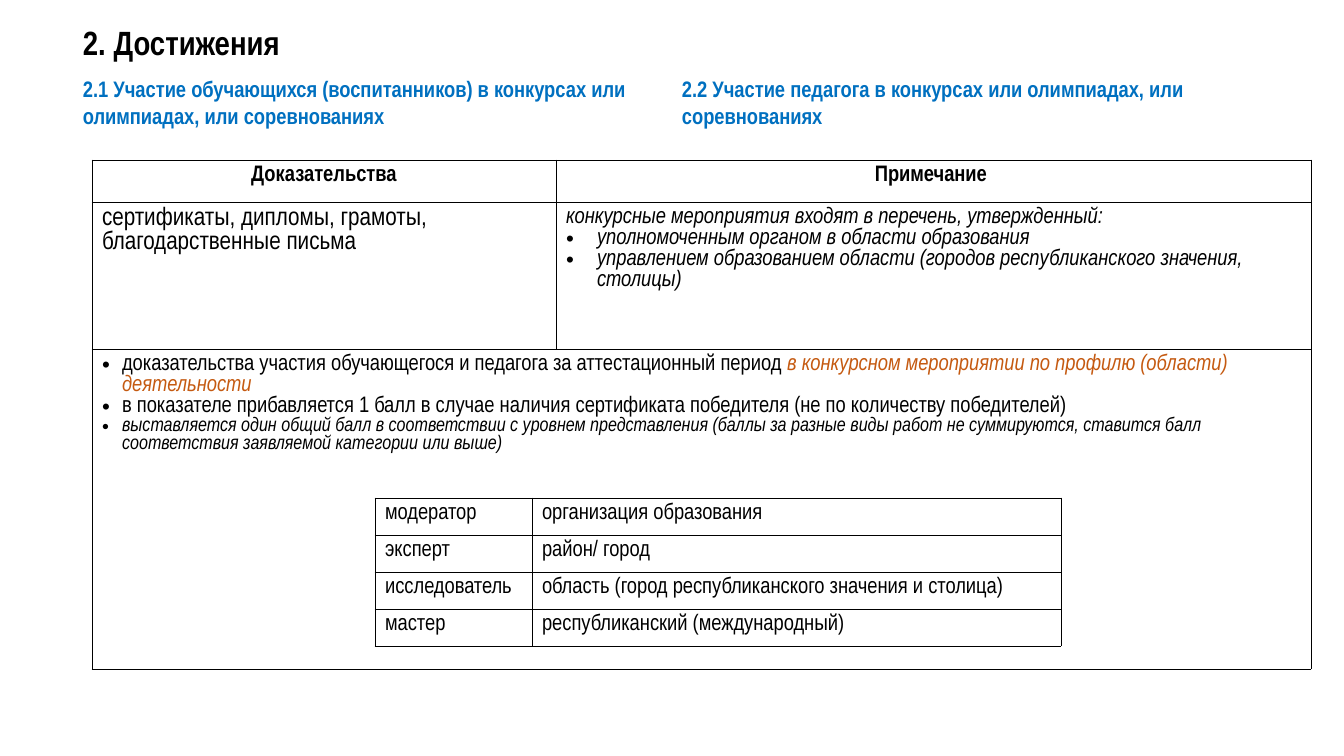
import pptx
import pptx.dml.color
import pptx.enum.text
import pptx.oxml
import pptx.oxml.ns
import pptx.util

PX = 914400 / 100.8
FONT = "Arial Narrow"
COLORS = {"black": "000000", "blue": "0070C0", "orange": "C55A11"}
ALIGN = pptx.enum.text.PP_ALIGN
ANCHOR = pptx.enum.text.MSO_ANCHOR


def px(n):
    return pptx.util.Emu(round(n * PX))


def add_run(p, text, size=16, color="black", bold=False, italic=False):
    r = p.add_run()
    r.text = text
    r.font.name = FONT
    r.font.size = pptx.util.Pt(size)
    r.font.bold = bold
    r.font.italic = italic
    r.font.color.rgb = pptx.dml.color.RGBColor.from_string(COLORS[color])


def add_xml(parent, xml):
    ns = pptx.oxml.ns.nsdecls("a")
    parent.append(pptx.oxml.parse_xml(xml.replace(" ", f" {ns} ", 1)))


def add_bullet(p, indent):
    pPr = p._p.get_or_add_pPr()
    pPr.set("marL", str(px(indent)))
    pPr.set("indent", str(-px(indent)))
    add_xml(pPr, '<a:buFont typeface="Arial"/>')
    add_xml(pPr, '<a:buChar char="•"/>')


def add_heading(slide, box, text, size, color, anchor=ANCHOR.TOP, spacing=1.0):
    sp = slide.shapes.add_textbox(*map(px, box))
    tf = sp.text_frame
    tf.word_wrap = True
    tf.vertical_anchor = anchor
    p = tf.paragraphs[0]
    p.line_spacing = spacing
    add_run(p, text, size, color, bold=True)


def fill_cell(cell, paragraphs, align=ALIGN.LEFT):
    tf = cell.text_frame
    for i, (indent, runs) in enumerate(paragraphs):
        p = tf.add_paragraph() if i else tf.paragraphs[0]
        p.alignment = align
        if indent:
            add_bullet(p, indent)
        for text, style in runs:
            add_run(p, text, **style)


def add_grid(slide, left, top, cols, rows):
    frame = slide.shapes.add_table(
        len(rows), len(cols), px(left), px(top), px(sum(cols)), px(sum(rows)))
    table = frame.table
    table.first_row = False
    table.horz_banding = False
    for col, width in zip(table.columns, cols):
        col.width = px(width)
    for row, height in zip(table.rows, rows):
        row.height = px(height)
    for cell in table.iter_cells():
        tcPr = cell._tc.get_or_add_tcPr()
        for side in ("lnL", "lnR", "lnT", "lnB"):
            add_xml(tcPr, f'<a:{side} w="6350"><a:solidFill><a:srgbClr val="{COLORS["black"]}"/>'
                          f'</a:solidFill></a:{side}>')
        cell.fill.background()
    return table


def add_headings(slide, left, top):
    add_heading(slide, (left, top, 1159, 59), "2. Достижения", 24, "black", ANCHOR.MIDDLE, 0.9)
    subheads = [
        (0, 572, "2.1 Участие обучающихся (воспитанников) в конкурсах или олимпиадах, или соревнованиях"),
        (599, 587, "2.2 Участие педагога в конкурсах или олимпиадах, или соревнованиях"),
    ]
    for dx, width, text in subheads:
        add_heading(slide, (left + dx, top + 55, width, 65), text, 16, "blue")


def add_evidence(slide, left, top):
    table = add_grid(slide, left, top, [464, 755], [42, 147, 320])
    bold, italic = {"bold": True}, {"italic": True}
    for c, text in enumerate(["Доказательства", "Примечание "]):
        fill_cell(table.cell(0, c), [(0, [(text, bold)])], ALIGN.CENTER)
    fill_cell(table.cell(1, 0), [
        (0, [("сертификаты, дипломы, грамоты, благодарственные письма", {"size": 18})]),
    ])
    fill_cell(table.cell(1, 1), [
        (0, [("конкурсные мероприятия входят в перечень, утвержденный:", italic)]),
        (31, [("уполномоченным органом в области образования", italic)]),
        (31, [("управлением образованием области (городов республиканского значения, столицы)", italic)]),
    ])
    table.cell(2, 0).merge(table.cell(2, 1))
    fill_cell(table.cell(2, 0), [
        (20, [("доказательства участия обучающегося и педагога за аттестационный период ", {}),
              ("в конкурсном мероприятии по профилю (области) деятельности",
               {"color": "orange", "italic": True})]),
        (20, [("в показателе прибавляется 1 балл в случае наличия сертификата победителя "
               "(не по количеству победителей)", {})]),
        (20, [("выставляется один общий балл в соответствии с уровнем представления "
               "(баллы за разные виды работ не суммируются, ставится балл соответствия "
               "заявляемой категории или выше)", {"size": 14, "italic": True})]),
    ])


def add_levels(slide, left, top):
    levels = [
        ("модератор", "организация образования"),
        ("эксперт", "район/ город"),
        ("исследователь", "область (город республиканского значения и столица)"),
        ("мастер", "республиканский (международный)"),
    ]
    table = add_grid(slide, left, top, [157, 529], [37] * len(levels))
    for r, level in enumerate(levels):
        for c, text in enumerate(level):
            fill_cell(table.cell(r, c), [(0, [(text, {})])])


def main():
    prs = pptx.Presentation()
    prs.slide_width = px(1344)
    prs.slide_height = px(756)
    slide = prs.slides.add_slide(prs.slide_layouts[6])
    add_headings(slide, 73, 15)
    add_evidence(slide, 92, 160)
    add_levels(slide, 375, 498)
    prs.save("out.pptx")


if __name__ == "__main__":
    main()
